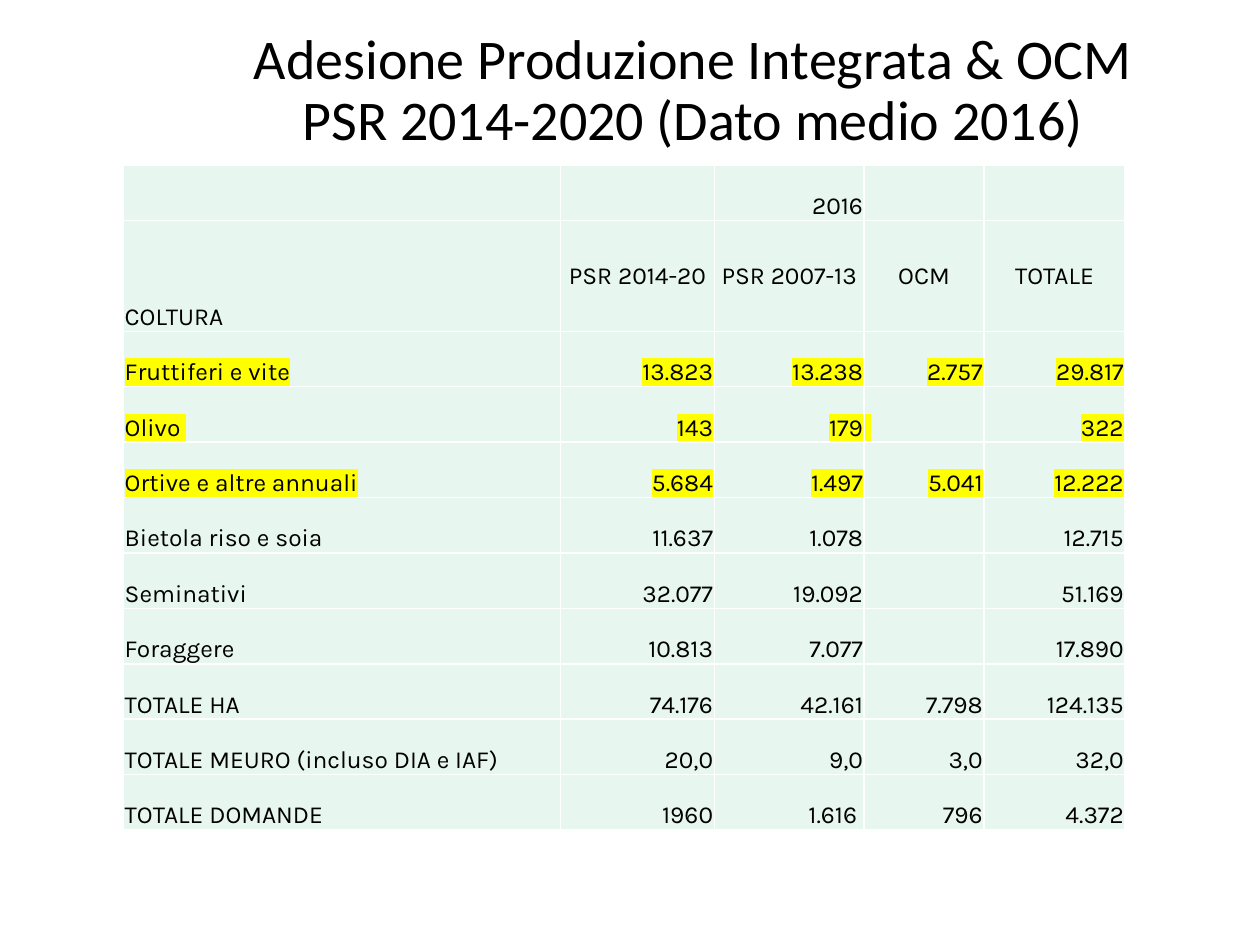
from lxml import etree
from pptx import Presentation
from pptx.dml.color import RGBColor
from pptx.enum.text import MSO_ANCHOR, MSO_AUTO_SIZE, PP_ALIGN
from pptx.oxml.ns import qn
from pptx.util import Inches, Pt

LEFT, CENTER, RIGHT = PP_ALIGN.LEFT, PP_ALIGN.CENTER, PP_ALIGN.RIGHT
TOP, MIDDLE, BOTTOM = MSO_ANCHOR.TOP, MSO_ANCHOR.MIDDLE, MSO_ANCHOR.BOTTOM

TITLE_LINES = ["Adesione Produzione Integrata & OCM", "PSR 2014-2020 (Dato medio 2016)"]
ROWS = [
    ["", "", "2016", "", ""],
    ["COLTURA", "PSR 2014-20", "PSR 2007-13", "OCM", "TOTALE"],
    ["Fruttiferi e vite", "13.823", "13.238", "2.757", "29.817"],
    ["Olivo ", "143", "179", " ", "322"],
    ["Ortive e altre annuali", "5.684", "1.497", "5.041", "12.222"],
    ["Bietola riso e soia", "11.637", "1.078", "", "12.715"],
    ["Seminativi", "32.077", "19.092", "", "51.169"],
    ["Foraggere", "10.813", "7.077", "", "17.890"],
    ["TOTALE HA", "74.176", "42.161", "7.798", "124.135"],
    ["TOTALE MEURO (incluso DIA e IAF)", "20,0", "9,0", "3,0", "32,0"],
    ["TOTALE DOMANDE", "1960", "1.616 ", "796", "4.372"],
]
HEADER_ROW = 1
HIGHLIGHTED_ROWS = (2, 3, 4)
COLUMN_WIDTHS = [3.47, 1.22, 1.19, 0.95, 1.12]
ROW_HEIGHT = 0.44

THEME = {
    "title_font": "Calibri", "title_size": 32,
    "table_font": "Karla", "table_size": 14,
    "text": "000000", "cell": "E7F6EF", "border": "FFFFFF", "highlight": "FFFF00",
}


def style_font(font, role):
    font.name = THEME[role + "_font"]
    font.size = Pt(THEME[role + "_size"])
    font.color.rgb = RGBColor.from_string(THEME["text"])


def add_color(parent, color):
    etree.SubElement(parent, qn("a:srgbClr"), val=color)


def highlight(run):
    marker = etree.Element(qn("a:highlight"))
    add_color(marker, THEME["highlight"])
    run.font.fill._xPr.find(qn("a:solidFill")).addnext(marker)


def add_borders(cell):
    properties = cell._tc.get_or_add_tcPr()
    for position, side in enumerate(("lnL", "lnR", "lnT", "lnB")):
        line = etree.Element(qn("a:" + side), w=str(Pt(1)))
        add_color(etree.SubElement(line, qn("a:solidFill")), THEME["border"])
        properties.insert(position, line)


def add_title(slide):
    title = slide.shapes.title
    title.left, title.top, title.width, title.height = map(Inches, (1.69, 0.2, 7.8, 0.91))
    frame = title.text_frame
    frame.word_wrap = True
    frame.auto_size = MSO_AUTO_SIZE.NONE
    frame.vertical_anchor = TOP
    frame.margin_right = Inches(0.28)
    paragraph = frame.paragraphs[0]
    paragraph.alignment = CENTER
    paragraph.line_spacing = 0.9
    for number, text in enumerate(TITLE_LINES):
        if number:
            paragraph.add_line_break()
        run = paragraph.add_run()
        run.text = text
        style_font(run.font, "title")


def fill_cell(cell, text, row, column):
    cell.fill.solid()
    cell.fill.fore_color.rgb = RGBColor.from_string(THEME["cell"])
    add_borders(cell)
    cell.margin_left = cell.margin_right = cell.margin_top = Inches(0.01)
    cell.margin_bottom = 0
    is_column_label = row == HEADER_ROW and column > 0
    cell.vertical_anchor = MIDDLE if is_column_label else BOTTOM
    if not text:
        return
    paragraph = cell.text_frame.paragraphs[0]
    if is_column_label:
        paragraph.alignment = CENTER
    else:
        paragraph.alignment = RIGHT if column and text.strip() else LEFT
    run = paragraph.add_run()
    run.text = text
    style_font(run.font, "table")
    if row in HIGHLIGHTED_ROWS:
        highlight(run)


def add_crop_table(slide):
    height = ROW_HEIGHT * (len(ROWS) + 1)
    table = slide.shapes.add_table(
        len(ROWS), len(COLUMN_WIDTHS),
        Inches(0.98), Inches(1.31), Inches(sum(COLUMN_WIDTHS)), Inches(height),
    ).table
    table.first_row = table.horz_banding = False
    for column, width in zip(table.columns, COLUMN_WIDTHS):
        column.width = Inches(width)
    for row, texts in enumerate(ROWS):
        table.rows[row].height = Inches(ROW_HEIGHT * (2 if row == HEADER_ROW else 1))
        for column, text in enumerate(texts):
            fill_cell(table.cell(row, column), text, row, column)


def main():
    presentation = Presentation()
    presentation.slide_width, presentation.slide_height = Inches(10), Inches(7.5)
    slide = presentation.slides.add_slide(presentation.slide_layouts[5])
    add_title(slide)
    add_crop_table(slide)
    presentation.save("out.pptx")


if __name__ == "__main__":
    main()
